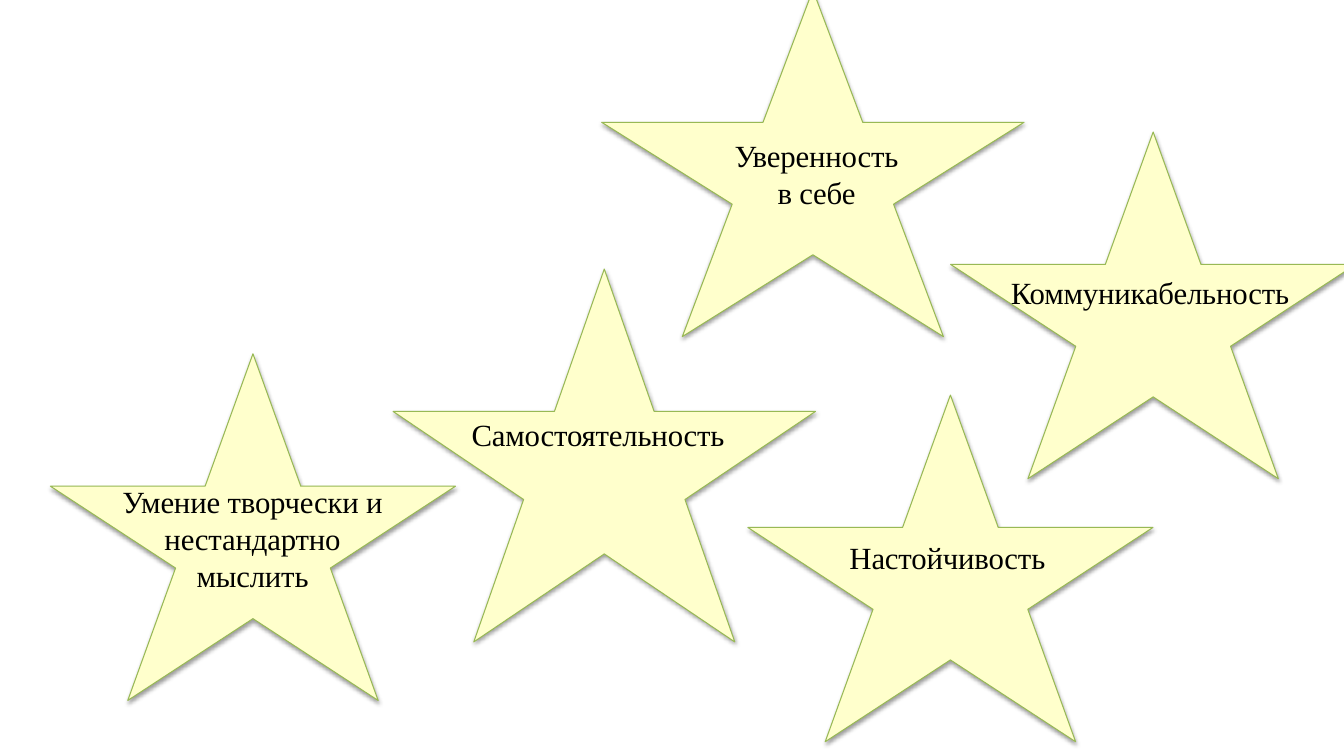
from lxml import etree
from pptx import Presentation
from pptx.dml.color import RGBColor
from pptx.enum.shapes import MSO_SHAPE
from pptx.enum.text import MSO_AUTO_SIZE, PP_ALIGN
from pptx.oxml.ns import qn
from pptx.util import Pt

STAR = MSO_SHAPE.STAR_5_POINT
GROW = MSO_AUTO_SIZE.SHAPE_TO_FIT_TEXT
LEFT, CENTER = PP_ALIGN.LEFT, PP_ALIGN.CENTER

SMALL, WIDE, LARGE = (289.4, 247.7), (301.7, 247.7), (301.7, 266.4)
QUALITIES = [
    ((36, 252.7), SMALL, (41.8, 88.6, 205.2, 87.1), CENTER,
     ["Умение творчески и", "нестандартно", "мыслить"]),
    ((280.8, 192.2), LARGE, (49, 101.5, 270, 33.8), LEFT, ["Самостоятельность"]),
    ((534.2, 282.2), SMALL, (65.5, 99.2, 162, 33.8), LEFT, ["Настойчивость"]),
    ((679, 94.3), SMALL, (36, 97.9, 217.4, 33.8), LEFT, ["Коммуникабельность"]),
    ((429.8, -7.2), WIDE, (56.9, 101.5, 193, 60.5), CENTER, ["Уверенность", "в себе"]),
]


def color(value):
    """Turn a hex string into a colour."""
    return RGBColor.from_string(value)


def add_shadow(shape):
    """Give a shape a soft shadow that falls straight down."""
    shape.shadow.inherit = False
    effects = shape.element.spPr.find(qn("a:effectLst"))
    shadow = etree.SubElement(effects, qn("a:outerShdw"), blurRad=str(Pt(3.1)),
                              dist=str(Pt(1.6)), dir="5400000", rotWithShape="0")
    tint = etree.SubElement(shadow, qn("a:srgbClr"), val="000000")
    etree.SubElement(tint, qn("a:alpha"), val="38000")


def add_star(page, left, top, width, height):
    """Draw one pale yellow star."""
    star = page.shapes.add_shape(STAR, Pt(left), Pt(top), Pt(width), Pt(height))
    star.fill.solid()
    star.fill.fore_color.rgb = color("FFFFCC")
    star.line.color.rgb = color("98B955")
    star.line.width = Pt(0.75)
    add_shadow(star)


def add_label(page, left, top, width, height, align, lines):
    """Write the lines of a label, one paragraph each."""
    box = page.shapes.add_textbox(Pt(left), Pt(top), Pt(width), Pt(height))
    frame = box.text_frame
    frame.word_wrap = True
    frame.auto_size = GROW
    for index, line in enumerate(lines):
        para = frame.add_paragraph() if index else frame.paragraphs[0]
        para.alignment = align
        span = para.add_run()
        span.text = line
        span.font.size = Pt(22)
        span.font.name = "Times New Roman"
        span.font.color.rgb = color("000000")
        span.font._element.set("spc", "-10")


def add_quality(page, corner, size, label, align, lines):
    """Place a star with its label set relative to the star's corner."""
    left, top = corner
    add_star(page, left, top, *size)
    shift_x, shift_y, width, height = label
    add_label(page, left + shift_x, top + shift_y, width, height, align, lines)


def main():
    """Build the slide of personal qualities."""
    deck = Presentation()
    deck.slide_width, deck.slide_height = Pt(960), Pt(540)
    page = deck.slides.add_slide(deck.slide_layouts[6])
    for quality in QUALITIES:
        add_quality(page, *quality)
    deck.save("out.pptx")


if __name__ == "__main__":
    main()
